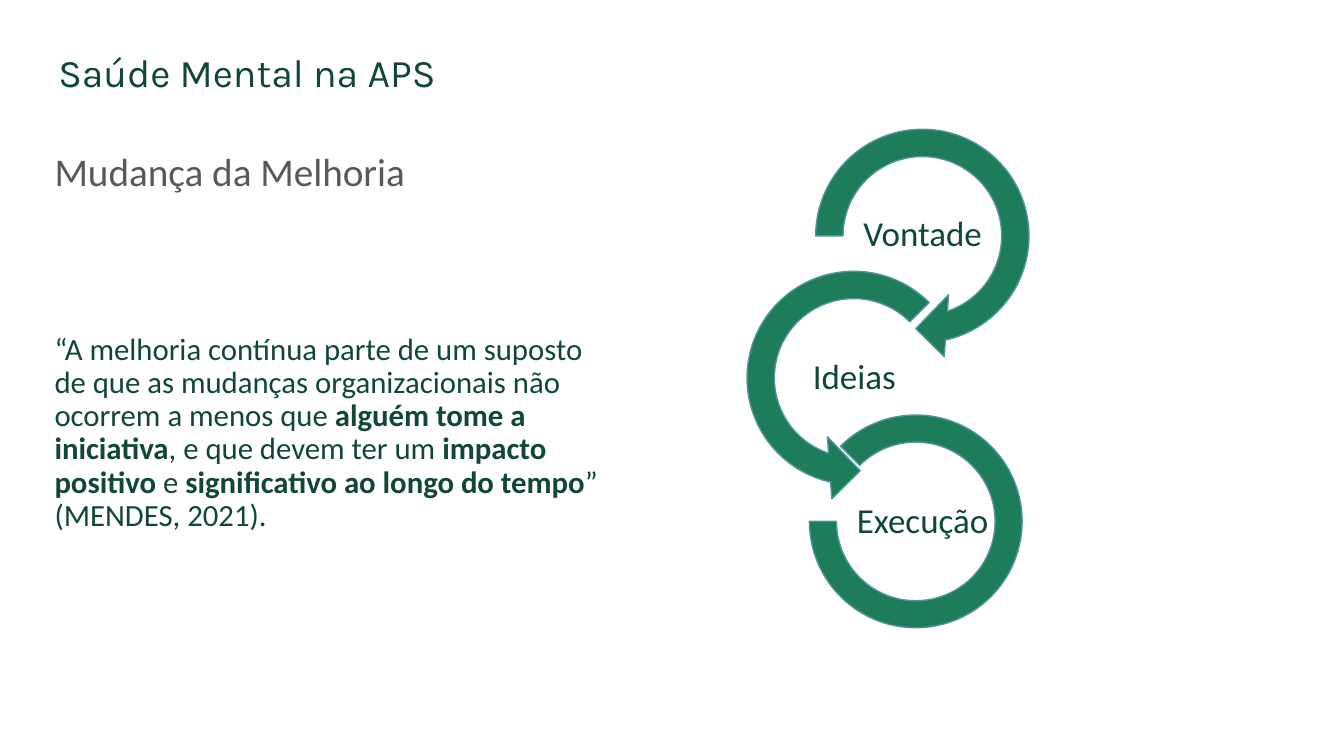
from dataclasses import dataclass

from pptx import Presentation
from pptx.dml.color import RGBColor
from pptx.enum.shapes import MSO_SHAPE
from pptx.enum.text import MSO_ANCHOR, MSO_AUTO_SIZE, PP_ALIGN
from pptx.oxml.xmlchemy import OxmlElement
from pptx.util import Cm, Pt

CIRCULAR_ARROW = MSO_SHAPE.CIRCULAR_ARROW
LEFT_CIRCULAR_ARROW = MSO_SHAPE.LEFT_CIRCULAR_ARROW
BLOCK_ARC = MSO_SHAPE.BLOCK_ARC
MIDDLE, TOP = MSO_ANCHOR.MIDDLE, MSO_ANCHOR.TOP
LEFT, CENTER = PP_ALIGN.LEFT, PP_ALIGN.CENTER
NO_AUTOFIT = MSO_AUTO_SIZE.NONE
TITLE_AND_CONTENT = 1


@dataclass(frozen=True)
class Theme:
    dark_green: RGBColor = RGBColor(0x11, 0x48, 0x34)
    green: RGBColor = RGBColor(0x1D, 0x7D, 0x5B)
    outline: RGBColor = RGBColor(0x52, 0x93, 0x9E)
    gray: RGBColor = RGBColor(0x59, 0x59, 0x59)
    heading_font: str = "Karla"
    text_font: str = "Calibri"
    heading_size: int = 28
    quote_size: int = 22
    label_size: int = 25
    line_spacing: float = 0.9


@dataclass(frozen=True)
class Span:
    text: str
    bold: bool = False


@dataclass(frozen=True)
class Stage:
    label: str
    label_left: float
    preset: MSO_SHAPE
    left: float
    top: float
    size: float
    adjustments: tuple[float, ...]


THEME = Theme()

QUOTE = (
    Span("“A melhoria contínua parte de um suposto de que as mudanças "
         "organizacionais não ocorrem a menos que "),
    Span("alguém tome a iniciativa", True),
    Span(", e que devem ter um "),
    Span("impacto positivo", True),
    Span(" e "),
    Span("significativo ao longo do tempo", True),
    Span("” (MENDES, 2021)."),
)

# Lengths in centimetres
STAGES = (
    Stage("Vontade", 21.51, CIRCULAR_ARROW, 20.12, 2.82, 6.25,
          (0.11, 11.42, 45, 108, 0.125)),
    Stage("Ideias", 19.79, LEFT_CIRCULAR_ARROW, 18.39, 6.4, 6.25,
          (0.11, 11.42, 63, 189, 0.125)),
    Stage("Execução", 21.51, BLOCK_ARC, 20.4, 10.46, 5.36,
          (135, 108, 0.127)),
)
LABEL_TOP, LABEL_STEP = 5.05, 3.62
LABEL_WIDTH, LABEL_HEIGHT, LABEL_INSET = 3.48, 1.73, 0.05


def place(box, left: float, top: float, width: float, height: float) -> None:
    box.left, box.top = Cm(left), Cm(top)
    box.width, box.height = Cm(width), Cm(height)


def write(box, spans: tuple[Span, ...], size: int, color: RGBColor,
          font: str = THEME.text_font, align: PP_ALIGN = LEFT,
          anchor: MSO_ANCHOR = TOP, spacing: float = THEME.line_spacing) -> None:
    """Fill a box with one paragraph of formatted spans."""
    frame = box.text_frame
    frame.word_wrap = True
    frame.auto_size = NO_AUTOFIT
    frame.vertical_anchor = anchor
    para = frame.paragraphs[0]
    para.alignment = align
    para.line_spacing = spacing
    para.space_before = Pt(0)
    for span in spans:
        run = para.add_run()
        run.text = span.text
        run.font.name = font
        run.font.size = Pt(size)
        run.font.bold = span.bold
        run.font.color.rgb = color


def remove_bullet(box) -> None:
    properties = box.text_frame.paragraphs[0]._p.get_or_add_pPr()
    properties.set("marL", "0")
    properties.set("indent", "0")
    properties.append(OxmlElement("a:buNone"))


def draw_stage(slide, stage: Stage, label_top: float) -> None:
    ring = slide.shapes.add_shape(stage.preset, Cm(stage.left), Cm(stage.top),
                                  Cm(stage.size), Cm(stage.size))
    for index, value in enumerate(stage.adjustments):
        ring.adjustments[index] = value
    ring.shadow.inherit = False
    ring.fill.solid()
    ring.fill.fore_color.rgb = THEME.green
    ring.line.color.rgb = THEME.outline
    ring.line.width = Pt(1)

    label = slide.shapes.add_textbox(Cm(stage.label_left), Cm(label_top),
                                     Cm(LABEL_WIDTH), Cm(LABEL_HEIGHT))
    frame = label.text_frame
    frame.margin_left = frame.margin_right = Cm(LABEL_INSET)
    frame.margin_top = frame.margin_bottom = Cm(LABEL_INSET)
    write(label, (Span(stage.label),), THEME.label_size, THEME.dark_green,
          align=CENTER, anchor=MIDDLE)


def main() -> None:
    deck = Presentation()
    deck.slide_width, deck.slide_height = Cm(33.87), Cm(19.05)
    page = deck.slides.add_slide(deck.slide_layouts[TITLE_AND_CONTENT])

    # Course heading
    heading = page.shapes.add_textbox(Cm(1.22), Cm(1.09), Cm(17.98), Cm(1.45))
    write(heading, (Span("Saúde Mental na APS"),), THEME.heading_size,
          THEME.dark_green, font=THEME.heading_font, spacing=1.0)

    # Title and quotation
    title = page.shapes.title
    place(title, 1.12, 2.74, 29.21, 3.28)
    write(title, (Span("Mudança da Melhoria"),), THEME.heading_size,
          THEME.gray, anchor=MIDDLE)
    quote = page.placeholders[1]
    place(quote, 1.12, 8.28, 14.33, 8.28)
    remove_bullet(quote)
    write(quote, QUOTE, THEME.quote_size, THEME.dark_green)

    # Chain of improvement stages
    for index, stage in enumerate(STAGES):
        draw_stage(page, stage, LABEL_TOP + index * LABEL_STEP)

    deck.save("out.pptx")


if __name__ == "__main__":
    main()
